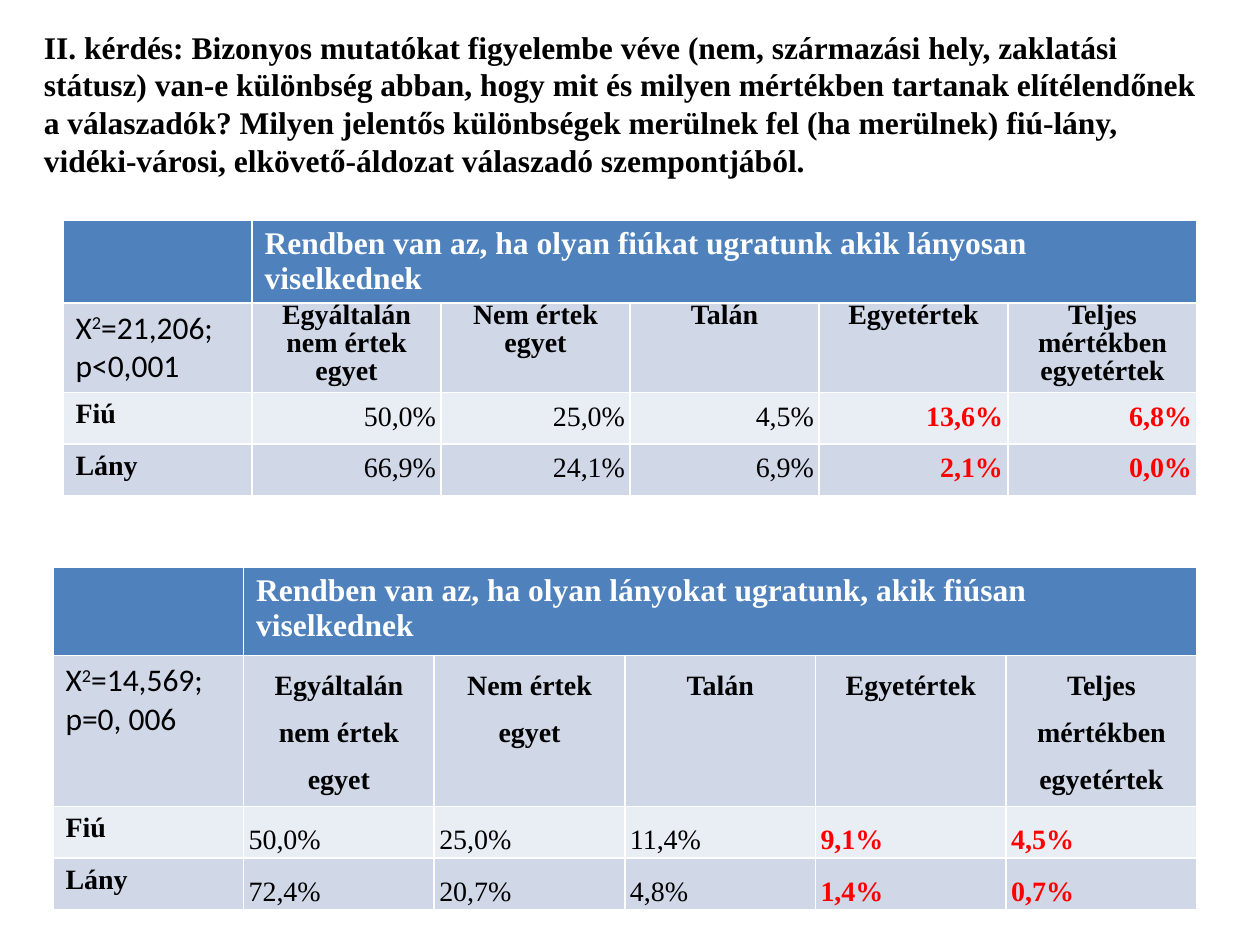
"""Build a slide with a research question and two survey result tables."""
from dataclasses import dataclass

from pptx import Presentation
from pptx.dml.color import RGBColor
from pptx.enum.text import MSO_ANCHOR, MSO_AUTO_SIZE, PP_ALIGN
from pptx.util import Inches, Pt

CENTER, RIGHT, JUSTIFY = PP_ALIGN.CENTER, PP_ALIGN.RIGHT, PP_ALIGN.JUSTIFY
TOP, MIDDLE = MSO_ANCHOR.TOP, MSO_ANCHOR.MIDDLE
GROW = MSO_AUTO_SIZE.SHAPE_TO_FIT_TEXT


@dataclass(frozen=True)
class Theme:
    serif: str = "Times New Roman"
    sans: str = "Calibri"
    large: int = 18
    small: int = 16
    black: str = "000000"
    white: str = "FFFFFF"
    red: str = "FF0000"
    header: str = "4F81BD"
    bands: tuple = ("D0D8E8", "E9EDF4")


ANSWERS = ["Egyáltalán nem értek egyet", "Nem értek egyet", "Talán",
           "Egyetértek", "Teljes mértékben egyetértek"]
QUESTION = (
    "II. kérdés: Bizonyos mutatókat figyelembe véve (nem, származási hely, "
    "zaklatási státusz) van-e különbség abban, hogy mit és milyen mértékben "
    "tartanak elítélendőnek a válaszadók? Milyen jelentős különbségek merülnek "
    "fel (ha merülnek) fiú-lány, vidéki-városi, elkövető-áldozat válaszadó "
    "szempontjából.")


class SlideBuilder:
    def __init__(self, slide, theme):
        self.s = slide
        self.theme = theme

    def style(self, r, size, color, bold=True, font=None):
        r.font.name = font or self.theme.serif
        r.font.size = Pt(size)
        r.font.bold = bold
        r.font.color.rgb = RGBColor.from_string(color)

    def title(self, text, left, top, width, height):
        box = self.s.shapes.add_textbox(Inches(left), Inches(top), Inches(width), Inches(height))
        tf = box.text_frame
        tf.word_wrap = True
        tf.auto_size = GROW
        tf.text = text
        self.style(tf.paragraphs[0].runs[0], self.theme.large, self.theme.black)

    def label(self, cell, text, size, color):
        cell.text_frame.text = text
        self.style(cell.text_frame.paragraphs[0].runs[0], size, color)

    def statistic(self, cell, result):
        p = cell.text_frame.paragraphs[0]
        for text in ("X", "2", result):
            r = p.add_run()
            r.text = text
            self.style(r, self.theme.large, self.theme.black, False, self.theme.sans)
        p.runs[1].font._element.set("baseline", "30000")

    def compact(self, cell, text, align, spacing, anchor, color, bold):
        cell.margin_left = cell.margin_right = cell.margin_top = cell.margin_bottom = 0
        cell.vertical_anchor = anchor
        self.label(cell, text, self.theme.small, color)
        p = cell.text_frame.paragraphs[0]
        p.runs[0].font.bold = bold
        p.alignment = align
        p.line_spacing = spacing
        for side in ("marL", "marR"):
            p._p.get_or_add_pPr().set(side, str(Inches(0.04)))

    def survey(self, left, top, width, heights, statement, result, rows, align, spacing):
        t = self.theme
        table = self.s.shapes.add_table(
            len(heights), len(ANSWERS) + 1, Inches(left), Inches(top),
            Inches(width), Inches(sum(heights))).table
        for i, height in enumerate(heights):
            table.rows[i].height = Inches(height)
            for cell in table.rows[i].cells:
                cell.fill.solid()
                color = t.bands[(i - 1) % 2] if i else t.header
                cell.fill.fore_color.rgb = RGBColor.from_string(color)
        table.cell(0, 1).merge(table.cell(0, len(ANSWERS)))
        self.label(table.cell(0, 1), statement, t.large, t.white)
        self.statistic(table.cell(1, 0), result)
        for j, answer in enumerate(ANSWERS, 1):
            self.compact(table.cell(1, j), answer, CENTER, spacing, TOP, t.black, True)
        for i, (group, values) in enumerate(rows.items(), 2):
            self.label(table.cell(i, 0), group, t.small, t.black)
            for j, value in enumerate(values, 1):
                agrees = j > 3
                self.compact(table.cell(i, j), value, align, spacing, MIDDLE,
                             t.red if agrees else t.black, agrees)


def main():
    prs = Presentation()
    prs.slide_width, prs.slide_height = Inches(10), Inches(7.5)
    builder = SlideBuilder(prs.slides.add_slide(prs.slide_layouts[6]), Theme())
    builder.survey(
        0.5, 1.75, 9, [0.65, 0.71, 0.41, 0.41],
        "Rendben van az, ha olyan fiúkat ugratunk akik lányosan viselkednek",
        "=21,206; p<0,001",
        {"Fiú": ["50,0%", "25,0%", "4,5%", "13,6%", "6,8%"],
         "Lány": ["66,9%", "24,1%", "6,9%", "2,1%", "0,0%"]},
        RIGHT, Pt(16))
    builder.title(QUESTION, 0.25, 0.17, 9.5, 1.31)
    builder.survey(
        0.42, 4.5, 9.08, [0.69, 1.2, 0.41, 0.41],
        "Rendben van az, ha olyan lányokat ugratunk, akik fiúsan viselkednek",
        "=14,569; p=0, 006",
        {"Fiú": ["50,0%", "25,0%", "11,4%", "9,1%", "4,5%"],
         "Lány": ["72,4%", "20,7%", "4,8%", "1,4%", "0,7%"]},
        JUSTIFY, 1.5)
    prs.save("out.pptx")


if __name__ == "__main__":
    main()
